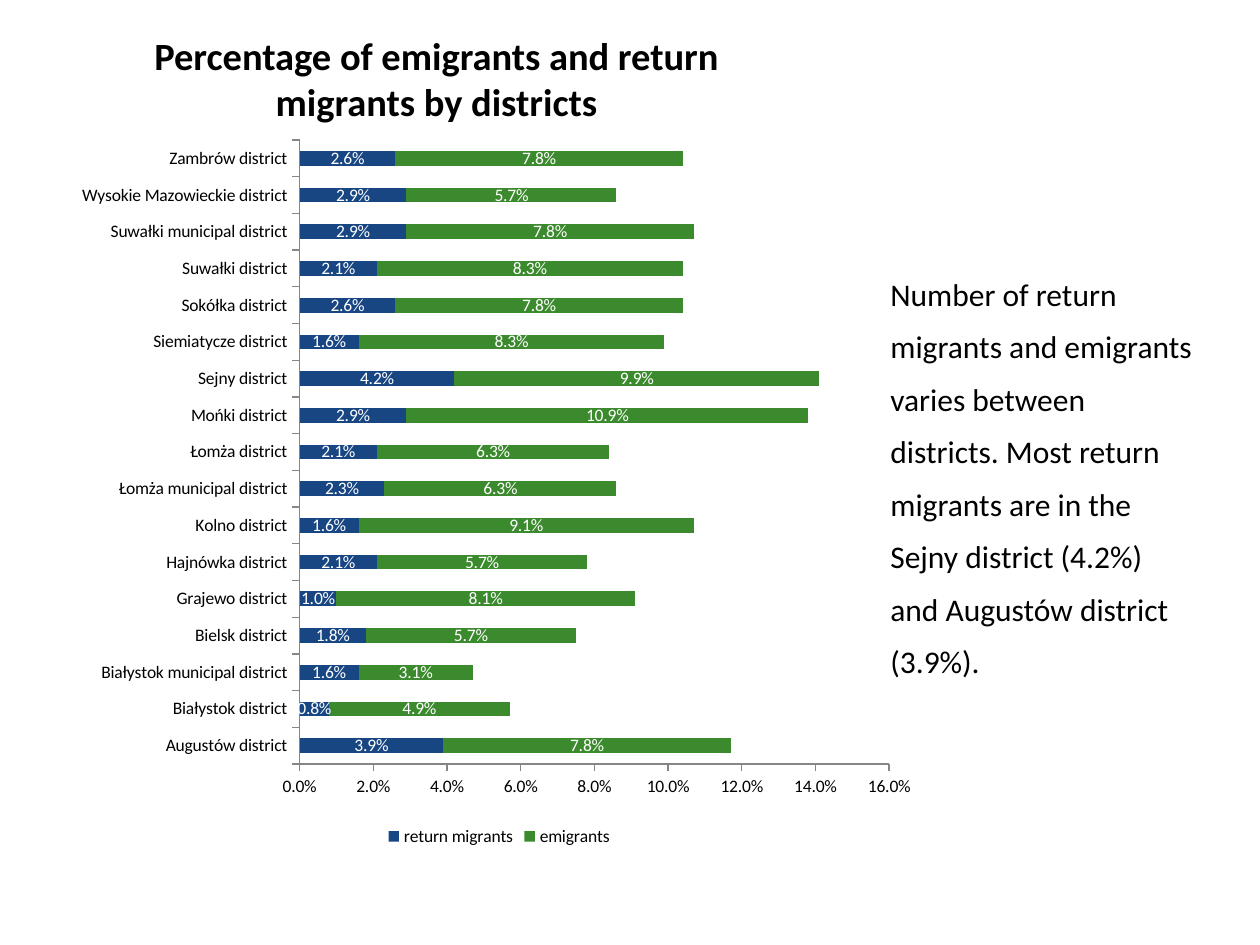
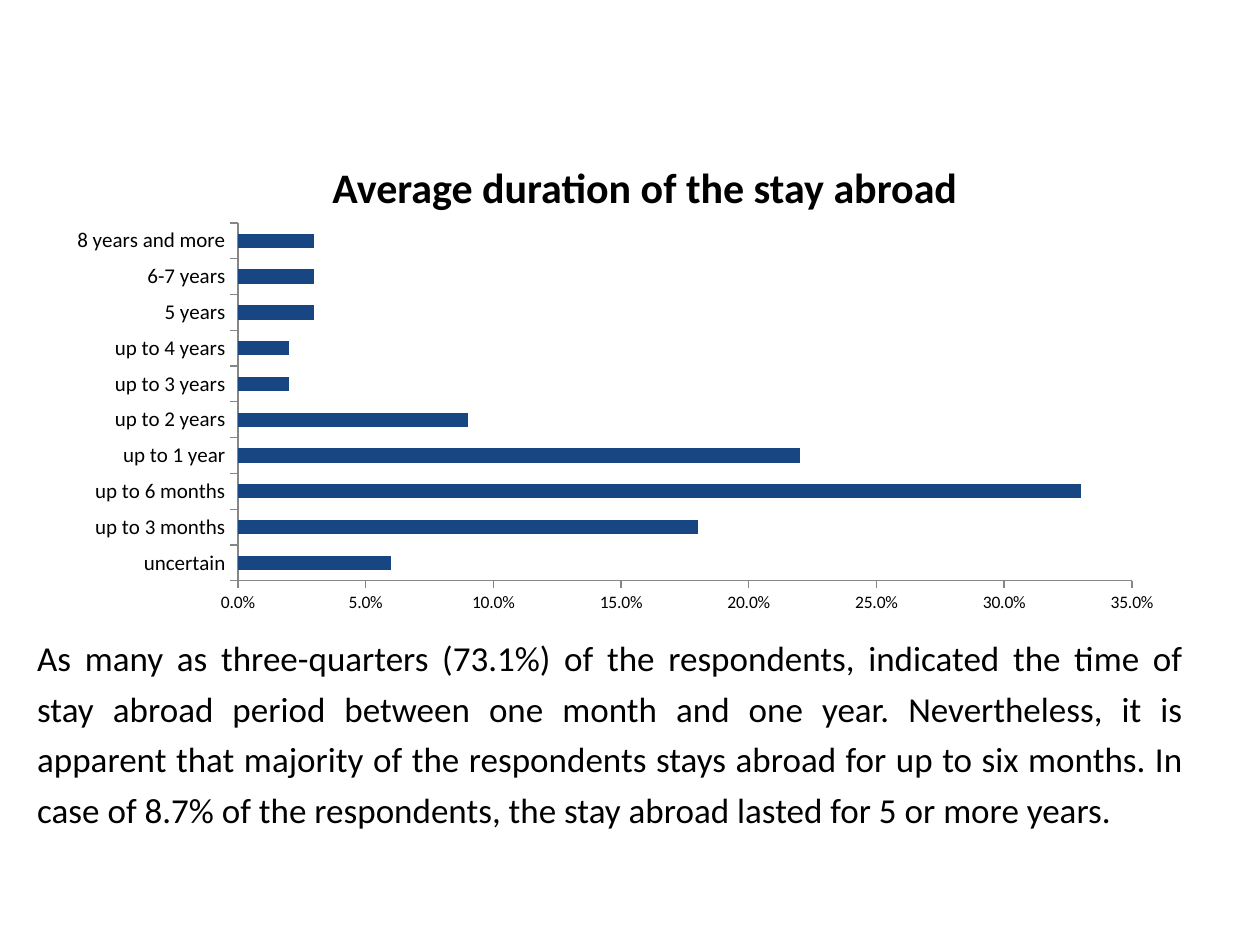
from lxml import etree
from pptx import Presentation
from pptx.chart.data import CategoryChartData
from pptx.dml.color import RGBColor
from pptx.enum.chart import XL_CHART_TYPE as ChartType
from pptx.enum.chart import XL_LABEL_POSITION as LabelPosition
from pptx.enum.chart import XL_LEGEND_POSITION as LegendPosition
from pptx.enum.chart import XL_TICK_MARK as TickMark
from pptx.enum.text import MSO_AUTO_SIZE as AutoSize
from pptx.enum.text import PP_ALIGN as Align
from pptx.oxml.ns import qn
from pptx.util import Cm, Pt

# Shared style
FONT = "Calibri"
BLACK = RGBColor(0x00, 0x00, 0x00)
WHITE = RGBColor(0xFF, 0xFF, 0xFF)
BLUE = RGBColor(0x18, 0x46, 0x83)
GREEN = RGBColor(0x3C, 0x8A, 0x2E)
AXIS_GRAY = RGBColor(0x86, 0x86, 0x86)
PERCENT = "0.0%"

# District: return migrants and emigrants, in percent
DISTRICTS = {
    "Augustów district": (3.9, 7.8),
    "Białystok district": (0.8, 4.9),
    "Białystok municipal district": (1.6, 3.1),
    "Bielsk district": (1.8, 5.7),
    "Grajewo district": (1.0, 8.1),
    "Hajnówka district": (2.1, 5.7),
    "Kolno district": (1.6, 9.1),
    "Łomża municipal district": (2.3, 6.3),
    "Łomża district": (2.1, 6.3),
    "Mońki district": (2.9, 10.9),
    "Sejny district": (4.2, 9.9),
    "Siemiatycze district": (1.6, 8.3),
    "Sokółka district": (2.6, 7.8),
    "Suwałki district": (2.1, 8.3),
    "Suwałki municipal district": (2.9, 7.8),
    "Wysokie Mazowieckie district": (2.9, 5.7),
    "Zambrów district": (2.6, 7.8),
}

# Length of stay: share of respondents, in percent
STAYS = {
    "uncertain": (6,),
    "up to 3 months": (18,),
    "up to 6 months": (33,),
    "up to 1 year": (22,),
    "up to 2 years": (9,),
    "up to 3 years": (2,),
    "up to 4 years": (2,),
    "5 years": (3,),
    "6-7 years": (3,),
    "8 years and more": (3,),
}


def style_font(font, size, color=BLACK, bold=False):
    font.name = FONT
    font.size = Pt(size)
    font.bold = bold
    font.color.rgb = color


def add_text(slide, box, text, size, align=Align.LEFT, bold=False, line_spacing=None):
    shape = slide.shapes.add_textbox(*map(Cm, box))
    text_frame = shape.text_frame
    text_frame.word_wrap = True
    text_frame.auto_size = AutoSize.SHAPE_TO_FIT_TEXT
    text_frame.text = text
    paragraph = text_frame.paragraphs[0]
    paragraph.alignment = align
    if line_spacing:
        paragraph.line_spacing = Pt(line_spacing)
    style_font(paragraph.runs[0].font, size, bold=bold)


def add_title(slide, box, text, size):
    add_text(slide, box, text, size, Align.CENTER, bold=True)


def place_plot(chart, x, y, width, height):
    """Fix the inner plot area, as fractions of the chart."""
    plot_area = chart.plots[0]._element.getparent()
    for old_layout in plot_area.findall(qn("c:layout")):
        plot_area.remove(old_layout)
    layout = etree.Element(qn("c:layout"))
    manual = etree.SubElement(layout, qn("c:manualLayout"))
    settings = [("layoutTarget", "inner"), ("xMode", "edge"), ("yMode", "edge"),
                ("x", x), ("y", y), ("w", width), ("h", height)]
    for name, value in settings:
        etree.SubElement(manual, qn(f"c:{name}")).set("val", str(value))
    plot_area.insert(0, layout)


def style_axis(axis, size):
    axis.has_major_gridlines = False
    axis.major_tick_mark = TickMark.OUTSIDE
    axis.format.line.color.rgb = AXIS_GRAY
    axis.format.line.width = Pt(0.75)
    style_font(axis.tick_labels.font, size)


def add_bar_chart(slide, box, chart_type, rows, series_colors, plot_box,
                  maximum, step, category_size=10):
    """Draw horizontal bars; series_colors maps each series name to its fill."""
    data = CategoryChartData(number_format=PERCENT)
    data.categories = list(rows)
    for name, values in zip(series_colors, zip(*rows.values())):
        data.add_series(name, [round(value / 100, 3) for value in values])
    chart = slide.shapes.add_chart(chart_type, *map(Cm, box), data).chart
    chart.has_title = False
    chart.has_legend = False
    style_font(chart.font, 10)

    plot = chart.plots[0]
    plot.vary_by_categories = False
    plot.gap_width = 150
    for series, color in zip(plot.series, series_colors.values()):
        series.format.fill.solid()
        series.format.fill.fore_color.rgb = color

    style_axis(chart.category_axis, category_size)
    value_axis = chart.value_axis
    style_axis(value_axis, 10)
    value_axis.minimum_scale = 0
    value_axis.maximum_scale = maximum
    value_axis.major_unit = step
    value_axis.tick_labels.number_format = PERCENT
    value_axis.tick_labels.number_format_is_linked = False
    place_plot(chart, *plot_box)
    return chart


def add_value_labels(chart):
    for series in chart.plots[0].series:
        labels = series.data_labels
        labels.show_value = True
        labels.number_format = PERCENT
        labels.number_format_is_linked = False
        labels.position = LabelPosition.CENTER
        style_font(labels.font, 10, WHITE)


def add_legend(chart):
    chart.has_legend = True
    chart.legend.position = LegendPosition.BOTTOM
    chart.legend.include_in_layout = False
    style_font(chart.legend.font, 10)


def build_districts_slide(slide):
    add_title(slide, (1.5, 0.52, 14.6, 2.13),
              "Percentage of emigrants and return migrants by districts", 22)
    add_text(slide, (17.7, 5.12, 6.6, 8.81),
             "Number of return migrants and emigrants varies between districts. "
             "Most return migrants are in the Sejny district (4.2%) and "
             "Augustów district (3.9%).", 18, line_spacing=30)
    chart = add_bar_chart(slide, (1.32, 2.53, 17.48, 14.63), ChartType.BAR_STACKED, DISTRICTS,
                          {"return migrants": BLUE, "emigrants": GREEN},
                          (0.27, 0.02, 0.68, 0.86), maximum=0.16, step=0.02)
    chart.plots[0].overlap = 100
    add_value_labels(chart)
    add_legend(chart)


def build_stays_slide(slide):
    add_title(slide, (3.5, 3.13, 19, 1.27), "Average duration of the stay abroad", 24)
    add_text(slide, (0.5, 12.53, 23.6, 4.32),
             "As many as three-quarters (73.1%) of the respondents, indicated the time of "
             "stay abroad period between one month and one year. Nevertheless, it is "
             "apparent that majority of the respondents stays abroad for up to six months. "
             "In case of 8.7% of the respondents, the stay abroad lasted for 5 or more years.",
             20, Align.JUSTIFY, line_spacing=29)
    add_bar_chart(slide, (1.19, 4.33, 22.53, 8.2), ChartType.BAR_CLUSTERED, STAYS,
                  {"Series 1": BLUE}, (0.16, 0.02, 0.8, 0.88),
                  maximum=0.35, step=0.05, category_size=12)


def main():
    presentation = Presentation()
    presentation.slide_width = Cm(25.4)
    presentation.slide_height = Cm(19.05)
    blank_layout = presentation.slide_layouts[6]
    for build_slide in (build_districts_slide, build_stays_slide):
        build_slide(presentation.slides.add_slide(blank_layout))
    presentation.save("out.pptx")


if __name__ == "__main__":
    main()
